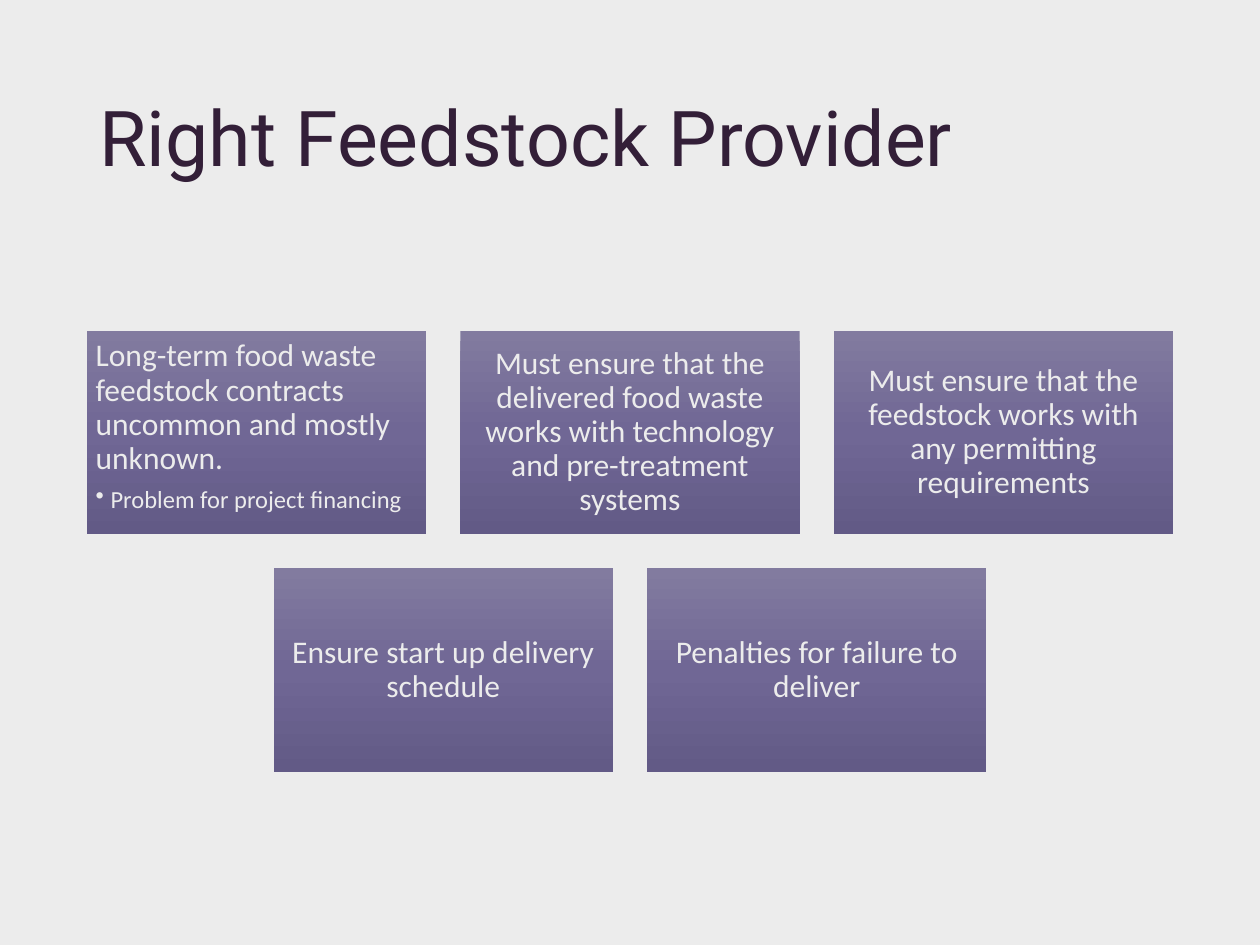
from copy import deepcopy

from pptx import Presentation
from pptx.dml.color import RGBColor
from pptx.enum.shapes import MSO_SHAPE as Shape
from pptx.enum.text import MSO_ANCHOR as Anchor, PP_ALIGN as Align
from pptx.oxml.ns import qn
from pptx.util import Cm, Pt

PAPER, INK = "ECECEC", "331F38"
SHADES = ["827B9F", "706795", "625A86"]
WIDE, HIGH, GAP, TOP = 6.84, 4.1, 0.69, 6.67
PAGE = 25.4

# Cards by row: main text, then any bullets
ROWS = [
    [
        ["Long-term food waste feedstock contracts uncommon and mostly unknown.",
         "Problem for project financing"],
        ["Must ensure that the delivered food waste works with technology "
         "and pre-treatment systems"],
        ["Must ensure that the feedstock works with any permitting requirements"],
    ],
    [
        ["Ensure start up delivery schedule"],
        ["Penalties for failure to deliver"],
    ],
]


def color(code):
    return RGBColor.from_string(code)


class Deck:
    head = {"name": "Roboto", "size": Pt(44)}
    main = {"name": "Calibri", "size": Pt(18)}
    sub = {"name": "Calibri", "size": Pt(14)}

    def __init__(self):
        self.file = Presentation()
        self.file.slide_width, self.file.slide_height = Cm(PAGE), Cm(19.05)
        self.slide = self.file.slides.add_slide(self.file.slide_layouts[5])
        fill = self.slide.background.fill
        fill.solid()
        fill.fore_color.rgb = color(PAPER)

    def style(self, para, look, tint, align, after=0):
        para.alignment, para.line_spacing = align, 0.9
        para.space_before, para.space_after = Pt(0), Pt(after)
        for key, value in look.items():
            setattr(para.font, key, value)
        para.font.color.rgb = color(tint)

    def title(self, text):
        box = self.slide.shapes.title
        box.left, box.top, box.width, box.height = map(Cm, (1.75, 1.02, 21.9, 3.68))
        frame = box.text_frame
        frame.text, frame.vertical_anchor = text, Anchor.MIDDLE
        self.style(frame.paragraphs[0], self.head, INK, Align.LEFT)

    def shade(self, shape):
        fill = shape.fill
        fill.gradient()
        fill.gradient_angle = 270
        # Add a middle stop between the two default ones
        first = next(shape.element.spPr.iter(qn("a:gs")))
        first.addnext(deepcopy(first))
        for step, (stop, tint) in enumerate(zip(fill.gradient_stops, SHADES)):
            stop.position = step / 2
            stop.color.rgb = color(tint)

    def bullet(self, para):
        props = para._p.get_or_add_pPr()
        props.set("marL", str(Cm(0.3)))
        props.set("indent", str(-Cm(0.3)))
        props.makeelement(qn("a:buChar"), {"char": "•"})
        props.append(props.makeelement(qn("a:buChar"), {"char": "•"}))

    def card(self, left, top, text, *points):
        shape = self.slide.shapes.add_shape(
            Shape.RECTANGLE, Cm(left), Cm(top), Cm(WIDE), Cm(HIGH))
        shape.shadow.inherit = False
        shape.line.fill.background()
        self.shade(shape)
        frame = shape.text_frame
        frame.word_wrap = True
        for side in ("left", "top", "right", "bottom"):
            setattr(frame, f"margin_{side}", Cm(0.18))
        # Cards with bullets read from the top left
        frame.vertical_anchor = Anchor.TOP if points else Anchor.MIDDLE
        align = Align.LEFT if points else Align.CENTER
        frame.text = text
        self.style(frame.paragraphs[0], self.main, PAPER, align, 6.3)
        for point in points:
            para = frame.add_paragraph()
            para.text, para.level = point, 1
            self.bullet(para)
            self.style(para, self.sub, PAPER, align, 2.1)

    def grid(self, rows):
        for row, cards in enumerate(rows):
            span = len(cards) * (WIDE + GAP) - GAP
            for col, texts in enumerate(cards):
                left = (PAGE - span) / 2 + col * (WIDE + GAP)
                self.card(left, TOP + row * (HIGH + GAP), *texts)


def main():
    deck = Deck()
    deck.title("Right Feedstock Provider")
    deck.grid(ROWS)
    deck.file.save("out.pptx")


if __name__ == "__main__":
    main()
